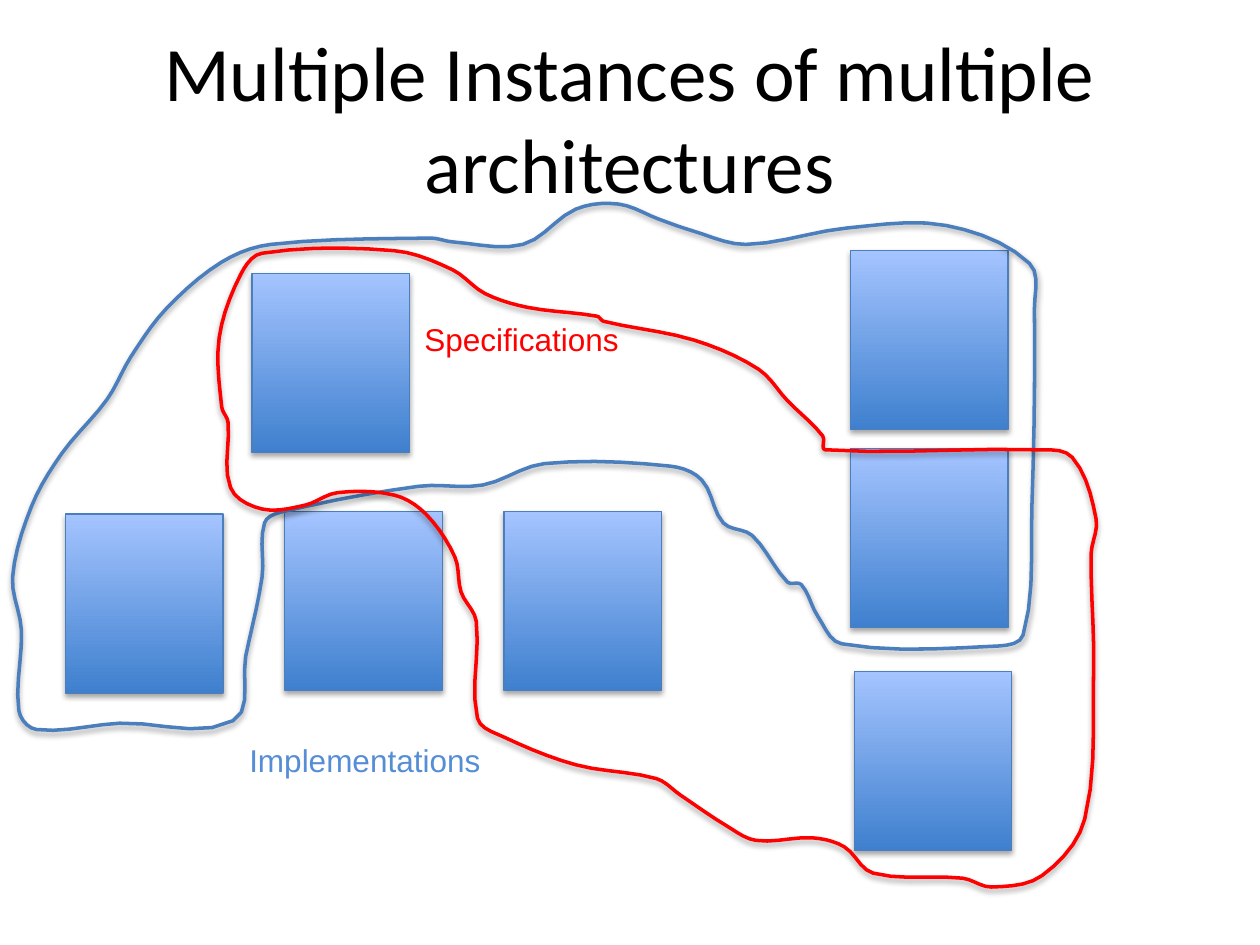
import math
from dataclasses import dataclass

import lxml.etree
import pptx
import pptx.dml.color
import pptx.enum.shapes
import pptx.enum.text
import pptx.oxml.ns
import pptx.util
from pptx.util import Inches


@dataclass(frozen=True)
class Theme:
    black: str = "000000"
    block_bottom: str = "3F80CE"
    block_top: str = "A4C4FF"
    blue_line: str = "4B7EBC"
    blue_text: str = "558ED5"
    red: str = "FF0000"
    title_font: str = "Calibri"
    label_font: str = "Arial"
    title_size: int = 44
    label_size: int = 18
    block_line: float = 0.75
    outline: float = 2


THEME = Theme()

BLOCK_SIZE = (1.25, 1.42)
BLOCK_POSITIONS = [
    (2, 2.17), (0.52, 4.08), (2.26, 4.06), (4, 4.06),
    (6.75, 1.99), (6.75, 3.56), (6.78, 5.33),
]

IMPLEMENTATIONS_OUTLINE = [
    (3.42, 1.89), (2.15, 1.94), (1.76, 2.08), (1.32, 2.45), (1.04, 2.83), (0.85, 3.17),
    (0.49, 3.6), (0.25, 4.02), (0.1, 4.58), (0.17, 5), (0.15, 5.64), (0.29, 5.79),
    (0.95, 5.74), (1.85, 5.72), (1.95, 5.21), (2.08, 4.58), (2.1, 4.15), (2.25, 4.06),
    (3.32, 3.86), (3.83, 3.85), (4.32, 3.68), (5.32, 3.7), (5.57, 3.81), (5.74, 4.15),
    (5.97, 4.25), (6.25, 4.62), (6.36, 4.64), (6.49, 4.89), (6.68, 5.11), (7.87, 5.13),
    (8.12, 5.04), (8.19, 4.02), (8.21, 2.45), (8.17, 2.09), (7.51, 1.79), (6.72, 1.81),
    (5.92, 1.94), (5.49, 1.83), (5.23, 1.74), (4.91, 1.62), (4.57, 1.66), (4.15, 1.94),
    (3.59, 1.92),
]

SPECIFICATIONS_OUTLINE = [
    (3.59, 2.14), (3.13, 1.99), (2.08, 2.01), (1.91, 2.18), (1.74, 2.68), (1.76, 3.23),
    (1.81, 3.35), (1.83, 3.87), (2.08, 4.04), (2.42, 4.01), (2.68, 3.91), (3.13, 3.93),
    (3.38, 4.08), (3.61, 4.42), (3.66, 4.7), (3.78, 4.93), (3.79, 5.7), (4, 5.85),
    (4.57, 6.07), (5.21, 6.18), (5.4, 6.31), (5.76, 6.55), (6, 6.67), (6.45, 6.65),
    (6.7, 6.72), (6.93, 6.93), (7.64, 6.97), (7.87, 7.04), (8.27, 6.95), (8.61, 6.5),
    (8.68, 5.3), (8.66, 4.4), (8.7, 4.12), (8.51, 3.63), (8.22, 3.57), (6.55, 3.57),
    (6.53, 3.46), (6.25, 3.18), (6.02, 2.93), (5.51, 2.7), (4.79, 2.55), (4.74, 2.51),
    (4.19, 2.44), (3.85, 2.33),
]


def rgb(value):
    return pptx.dml.color.RGBColor.from_string(value)


def add_shadow(shape):
    shape.shadow.inherit = False
    effects = shape._element.spPr.find(pptx.oxml.ns.qn("a:effectLst"))
    shadow = lxml.etree.SubElement(
        effects, pptx.oxml.ns.qn("a:outerShdw"), blurRad="39370", dist="22860",
        dir="5400000", rotWithShape="0")
    color = lxml.etree.SubElement(shadow, pptx.oxml.ns.qn("a:srgbClr"), val=THEME.black)
    lxml.etree.SubElement(color, pptx.oxml.ns.qn("a:alpha"), val="35000")


def set_line(shape, color, width):
    shape.line.color.rgb = rgb(color)
    shape.line.width = pptx.util.Pt(width)


def write_text(shape, text, *, font, size, color, align=None):
    paragraph = shape.text_frame.paragraphs[0]
    paragraph.alignment = align
    run = paragraph.add_run()
    run.text = text
    run.font.name = font
    run.font.size = pptx.util.Pt(size)
    run.font.color.rgb = rgb(color)


def place_title(slide, box, text):
    title = slide.shapes.title
    title.left, title.top, title.width, title.height = map(Inches, box)
    title.text_frame.vertical_anchor = pptx.enum.text.MSO_ANCHOR.MIDDLE
    write_text(title, text, font=THEME.title_font, size=THEME.title_size,
               color=THEME.black, align=pptx.enum.text.PP_ALIGN.CENTER)


def add_block(slide, box):
    block = slide.shapes.add_shape(
        pptx.enum.shapes.MSO_SHAPE.RECTANGLE, *map(Inches, box))
    block.fill.gradient()
    block.fill.gradient_angle = 90
    for stop, color in zip(block.fill.gradient_stops, (THEME.block_bottom, THEME.block_top)):
        stop.color.rgb = rgb(color)
    set_line(block, THEME.blue_line, THEME.block_line)
    add_shadow(block)


def add_label(slide, box, text, color):
    label = slide.shapes.add_textbox(*map(Inches, box))
    label.text_frame.word_wrap = False
    label.text_frame.auto_size = pptx.enum.text.MSO_AUTO_SIZE.SHAPE_TO_FIT_TEXT
    write_text(label, text, font=THEME.label_font, size=THEME.label_size, color=color)


def smooth_loop(points, steps=5):
    """Return a closed curve through the points, sampled from cubic segments."""
    count = len(points)
    directions = []
    for index in range(count):
        before, after = points[index - 1], points[(index + 1) % count]
        length = math.dist(before, after)
        directions.append([(b - a) / length for a, b in zip(before, after)])
    curve = []
    for index, start in enumerate(points):
        following = (index + 1) % count
        end = points[following]
        handle = math.dist(start, end) / 3
        for step in range(steps):
            t = step / steps
            u = 1 - t
            curve.append([
                u**3 * a + 3 * u * u * t * (a + handle * p)
                + 3 * u * t * t * (b - handle * q) + t**3 * b
                for a, b, p, q in zip(start, end, directions[index], directions[following])
            ])
    return curve


def add_outline(slide, origin, points, color):
    left, top = origin
    corners = [(Inches(left + x), Inches(top + y)) for x, y in smooth_loop(points)]
    builder = slide.shapes.build_freeform(*corners[0])
    builder.add_line_segments(corners[1:], close=True)
    outline = builder.convert_to_shape()
    outline.fill.background()
    set_line(outline, color, THEME.outline)
    add_shadow(outline)


def place_diagram(slide, box):
    left, top = box[:2]
    for x, y in BLOCK_POSITIONS:
        add_block(slide, (left + x, top + y, *BLOCK_SIZE))
    add_label(slide, (left + 3.27, top + 2.49, 1.76, 0.4), "Specifications", THEME.red)
    add_label(slide, (left + 1.88, top + 5.83, 2.05, 0.4), "Implementations", THEME.blue_text)
    add_outline(slide, (left, top), IMPLEMENTATIONS_OUTLINE, THEME.blue_line)
    add_outline(slide, (left, top), SPECIFICATIONS_OUTLINE, THEME.red)


def main():
    presentation = pptx.Presentation()
    presentation.slide_width, presentation.slide_height = Inches(10), Inches(7.5)
    slide = presentation.slides.add_slide(presentation.slide_layouts[5])
    place_title(slide, (0.5, 0.3, 9, 1.25), "Multiple Instances of multiple architectures")
    place_diagram(slide, (0, 0, 10, 7.5))
    presentation.save("out.pptx")


if __name__ == "__main__":
    main()
